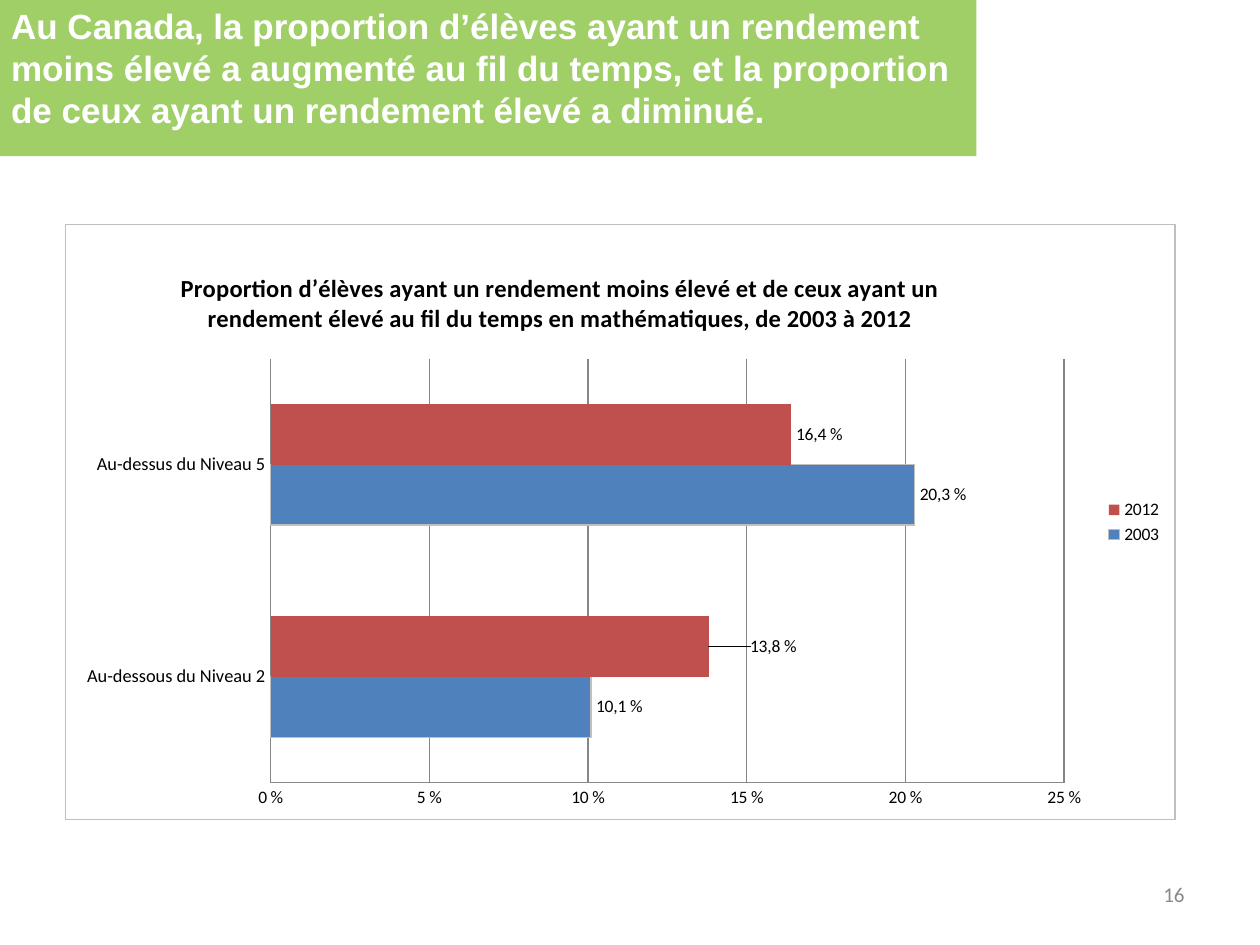
from pptx import Presentation
from pptx import util as u
from pptx.chart.data import CategoryChartData
from pptx.dml.color import RGBColor
from pptx.enum import chart as ch, shapes, text
from pptx.oxml import parse_xml
from pptx.oxml.ns import nsdecls

COLORS = {"banner": "A0CF67", "white": "FFFFFF", "black": "000000", "number": "898989",
          "grid": "868686", "border": "BFBFBF", "2003": "4F81BD", "2012": "C0504D"}
CATEGORIES = ["Au-dessous du Niveau 2", "Au-dessus du Niveau 5"]
SERIES = {"2003": [0.101, 0.203], "2012": [0.138, 0.164]}


def rgb(name):
    return RGBColor.from_string(COLORS[name])


def layout(target="", **places):
    """Manual chart layout, as fractions of the chart area."""
    inner = f'<c:layoutTarget val="{target}"/>' if target else ""
    if target:
        inner += '<c:xMode val="edge"/><c:yMode val="edge"/>'
    inner += "".join(f'<c:{k} val="{v}"/>' for k, v in places.items())
    return parse_xml(f'<c:layout {nsdecls("c")}><c:manualLayout>{inner}'
                     '</c:manualLayout></c:layout>')


class Slide:
    font = "Calibri"

    def __init__(self, s):
        self.s = s

    def style(self, font, size, color, bold=False, name=None):
        font.name, font.size, font.bold = name or self.font, u.Pt(size), bold
        font.color.rgb = rgb(color)

    def rect(self, box, fill):
        sp = self.s.shapes.add_shape(shapes.MSO_SHAPE.RECTANGLE, *map(u.Pt, box))
        sp.shadow.inherit = False
        sp.fill.solid()
        sp.fill.fore_color.rgb = rgb(fill)
        sp.line.fill.background()

    def text(self, box, words, size, color, bold=False, name=None,
             align=text.PP_ALIGN.LEFT, anchor=text.MSO_ANCHOR.TOP, spacing=None):
        tf = self.s.shapes.add_textbox(*map(u.Pt, box)).text_frame
        tf.word_wrap, tf.vertical_anchor = True, anchor
        p = tf.paragraphs[0]
        p.text, p.alignment = words, align
        if spacing:
            p.line_spacing = u.Pt(spacing)
        self.style(p.font, size, color, bold, name)

    def line(self, line, color):
        line.color.rgb, line.width = rgb(color), u.Pt(0.75)

    def bar_chart(self, box, title, categories, series):
        data = CategoryChartData(number_format="0.0%")
        data.categories = categories
        for name, values in series.items():
            data.add_series(name, values)
        chart = self.s.shapes.add_chart(ch.XL_CHART_TYPE.BAR_CLUSTERED,
                                        *map(u.Pt, box), data).chart
        self.style(chart.font, 10, "black")

        # Title and frame
        tf = chart.chart_title.text_frame
        tf.text = title
        self.style(tf.paragraphs[0].runs[0].font, 14, "black", True)
        title_xml = chart.chart_title._element
        for old in title_xml.findall("{*}layout"):
            title_xml.remove(old)
        place = layout(xMode="edge", yMode="edge", x=0.1, y=0.07)
        title_xml.find("{*}tx").addnext(place)
        chart.chart_title.include_in_layout = False
        frame = parse_xml(
            f'<c:spPr {nsdecls("c", "a")}><a:noFill/><a:ln w="{u.Pt(0.75)}"><a:solidFill>'
            f'<a:srgbClr val="{COLORS["border"]}"/></a:solidFill></a:ln></c:spPr>')
        chart._chartSpace.find("{*}chart").addnext(frame)

        # Plot area
        area = chart._chartSpace.find("{*}chart/{*}plotArea")
        for old in area.findall("{*}layout"):
            area.remove(old)
        area.insert(0, layout("inner", x=0.185, y=0.225, w=0.715, h=0.713))

        # Axes and legend
        cat, val = chart.category_axis, chart.value_axis
        for axis, size in ((cat, 10.5), (val, 10)):
            axis.major_tick_mark = axis.minor_tick_mark = ch.XL_TICK_MARK.NONE
            self.style(axis.tick_labels.font, size, "black")
            self.line(axis.format.line, "grid")
        val.minimum_scale, val.maximum_scale, val.major_unit = 0, 0.25, 0.05
        val.has_major_gridlines = True
        self.line(val.major_gridlines.format.line, "grid")
        val.tick_labels.number_format = "0\\ %"
        val.tick_labels.number_format_is_linked = False
        chart.has_legend = True
        chart.legend.position = ch.XL_LEGEND_POSITION.RIGHT
        chart.legend.include_in_layout = False
        self.style(chart.legend.font, 10, "black")

        # Bars and their labels
        plot = chart.plots[0]
        plot.gap_width, plot.overlap, plot.vary_by_categories = 150, 0, False
        for ser in plot.series:
            ser.invert_if_negative = False
            ser.format.fill.solid()
            ser.format.fill.fore_color.rgb = rgb(ser.name)
            ser.data_labels.show_value = True
            for i, value in enumerate(ser.values):
                label = ser.points[i].data_label
                label.text_frame.text = f"{value * 100:.1f} %".replace(".", ",")
                run = label.text_frame.paragraphs[0].runs[0]
                self.style(run.font, 10, "black")
                label.position = ch.XL_LABEL_POSITION.OUTSIDE_END
        self.line(plot.series[0].format.line, "border")

        # The 13,8 % label stands clear of the 15 % gridline
        shifted = plot.series[1].points[0].data_label._dLbl
        shifted.find("{*}idx").addnext(layout(x=0.033, y=0))


def main():
    prs = Presentation()
    prs.slide_width, prs.slide_height = u.Pt(720), u.Pt(540)
    slide = Slide(prs.slides.add_slide(prs.slide_layouts[6]))

    # Banner heading
    slide.rect((0, 0, 558, 89.3), "banner")
    slide.text((-0.7, -0.7, 559.4, 56),
               "Au Canada, la proportion d’élèves ayant un rendement moins élevé a augmenté "
               "au fil du temps, et la proportion de ceux ayant un rendement élevé a diminué.",
               20, "white", True, "Arial", spacing=24)

    # Chart
    slide.bar_chart((36.9, 128, 635, 340.8),
                    "Proportion d’élèves ayant un rendement moins élevé et de ceux ayant un "
                    "rendement élevé au fil du temps en mathématiques, de 2003 à 2012",
                    CATEGORIES, SERIES)

    # Slide number
    slide.text((635.8, 496.8, 48.2, 28.8), "16", 12, "number",
               align=text.PP_ALIGN.RIGHT, anchor=text.MSO_ANCHOR.MIDDLE)
    prs.save("out.pptx")


if __name__ == "__main__":
    main()
